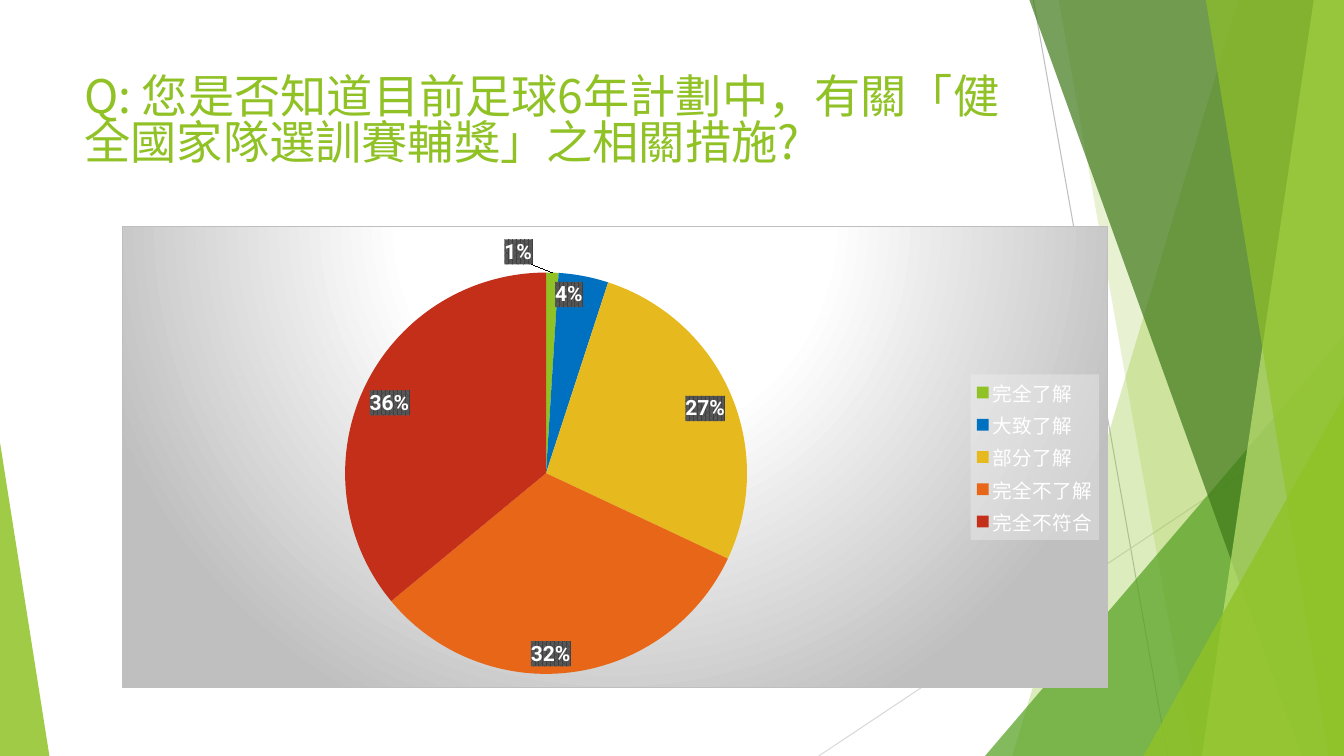
"""Build the survey slide with its pie chart of answers."""
from copy import deepcopy

from lxml.etree import SubElement
from pptx import Presentation
from pptx.chart.data import CategoryChartData
from pptx.dml.color import RGBColor
from pptx.enum.chart import XL_CHART_TYPE, XL_LABEL_POSITION, XL_LEGEND_POSITION
from pptx.enum.shapes import MSO_CONNECTOR, MSO_SHAPE
from pptx.enum.text import MSO_ANCHOR
from pptx.oxml import parse_xml
from pptx.oxml.ns import nsdecls, qn
from pptx.util import Inches, Pt

WIDTH, HEIGHT = 13.33, 7.5
COLORS = {
    "green": "90C226", "leaf": "54A021", "forest": "3F7819", "lime": "C0E474",
    "blue": "0070C0", "yellow": "E6B91E", "orange": "E76618", "red": "C42F1A",
    "white": "FFFFFF", "pale": "F2F2F2", "silver": "D9D9D9", "gray": "BFBFBF",
    "label": "404040", "label_back": "595959",
}
CJK_FONT, LATIN_FONT = "Noto Sans CJK SC", "Roboto"
QUESTION = "Q: 您是否知道目前足球6年計劃中，有關「健全國家隊選訓賽輔獎」之相關措施?"
ANSWERS = [
    ("完全了解", 1, "green"),
    ("大致了解", 4, "blue"),
    ("部分了解", 27, "yellow"),
    ("完全不了解", 32, "orange"),
    ("完全不符合", 36, "red"),
]
RAYS = [((10.25, 0), (11.58, HEIGHT), "gray"), ((WIDTH, 4.03), (8.12, HEIGHT), "silver")]
# kind, geometry, colour, opacity in percent
FACETS = [
    ("panel", (12.28, 10.04), "green", 30),
    ("panel", (10.5, 11.83), "green", 20),
    ("wedge", (9.77, 3.33, 3.56, 1), "leaf", 72),
    ("panel", (10.21, 12.91), "forest", 70),
    ("panel", (13.03, 11.92), "lime", 70),
    ("panel", (11.96, 13.18), "green", 65),
    ("wedge", (11.34, 3.93, 1.99, 1), "green", 80),
    ("wedge", (0, 4.39, 0.49, 0), "green", 85),
]
TITLE_BOX = (0.74, 0.67, 9.4, 1.44)
CHART_BOX = (1.21, 2.24, 9.78, 4.59)
PIE_LAYOUT = {"x": 0.226, "y": 0.1, "w": 0.408, "h": 0.87}


def rgb(name):
    return RGBColor.from_string(COLORS[name])


def color_xml(name, extra=""):
    return f'<a:srgbClr val="{COLORS[name]}">{extra}</a:srgbClr>'


def add_ray(slide, start, end, color):
    ray = slide.shapes.add_connector(MSO_CONNECTOR.STRAIGHT, *map(Inches, start + end))
    ray.line.color.rgb = rgb(color)
    ray.line.width = Pt(0.75)
    SubElement(ray._element.spPr, qn("a:effectLst"))


def add_facet(slide, kind, geometry, color, opacity):
    if kind == "panel":
        top_x, bottom_x = geometry
        corners = [(WIDTH, 0), (WIDTH, HEIGHT), (bottom_x, HEIGHT)]
        outline = slide.shapes.build_freeform(Inches(top_x), 0)
        outline.add_line_segments([(Inches(x), Inches(y)) for x, y in corners])
        facet = outline.convert_to_shape()
    else:
        left, top, width, apex = geometry
        facet = slide.shapes.add_shape(
            MSO_SHAPE.ISOSCELES_TRIANGLE, *map(Inches, (left, top, width, HEIGHT - top)))
        facet.adjustments[0] = apex
    facet.shadow.inherit = False
    facet.line.fill.background()
    facet.fill.solid()
    facet.fill.fore_color.rgb = rgb(color)
    tint = facet._element.spPr.find(qn("a:solidFill"))[0]
    SubElement(tint, qn("a:alpha"), val=str(opacity * 1000))


def add_question(slide):
    box = slide.shapes.add_textbox(*map(Inches, TITLE_BOX))
    frame = box.text_frame
    frame.word_wrap = True
    frame.vertical_anchor = MSO_ANCHOR.TOP
    frame.margin_top = Inches(0.1)
    paragraph = frame.paragraphs[0]
    paragraph.line_spacing = 0.82
    run = paragraph.add_run()
    run.text = QUESTION
    run.font.size = Pt(33)
    run.font.name = CJK_FONT
    run.font.color.rgb = rgb("green")
    SubElement(run.font._element, qn("a:ea"), typeface=CJK_FONT)


def style_font(font, size, color, bold=False):
    font.name = LATIN_FONT
    font.size = Pt(size)
    font.bold = bold
    font.color.rgb = rgb(color)


def fill_behind_text(parent, fill):
    parent.find(qn("c:txPr")).addprevious(
        parse_xml(f'<c:spPr {nsdecls("c", "a")}>{fill}</c:spPr>'))


def layout_xml(parts, target=""):
    places = "".join(f'<c:{key} val="{value}"/>' for key, value in parts.items())
    return parse_xml(f'<c:layout {nsdecls("c")}><c:manualLayout>{target}{places}'
                     '</c:manualLayout></c:layout>')


def style_labels(plot):
    plot.has_data_labels = True
    labels = plot.data_labels
    labels.show_percentage = True
    labels.show_value = False
    labels.number_format = "0%"
    labels.number_format_is_linked = False
    labels.position = XL_LABEL_POSITION.INSIDE_END
    style_font(labels.font, 15, "white", True)
    element = labels._element
    fill_behind_text(element, '<a:pattFill prst="pct75">'
                     f'<a:fgClr>{color_xml("label")}</a:fgClr>'
                     f'<a:bgClr>{color_xml("label_back")}</a:bgClr></a:pattFill>')
    outside = parse_xml(f'<c:dLbl {nsdecls("c")}><c:idx val="0"/></c:dLbl>')
    outside.append(layout_xml({"x": -0.035, "y": -0.005}))
    for child in element:
        if child.tag != qn("c:showLeaderLines"):
            outside.append(deepcopy(child))
    outside.find(qn("c:dLblPos")).set("val", "outEnd")
    element.insert(0, outside)


def add_pie(slide):
    data = CategoryChartData()
    data.categories = [answer for answer, _, _ in ANSWERS]
    data.add_series("Series 1", [share for _, share, _ in ANSWERS])
    chart = slide.shapes.add_chart(XL_CHART_TYPE.PIE, *map(Inches, CHART_BOX), data).chart
    chart.has_title = False
    chart.font.size = Pt(10)
    chart.font.name = LATIN_FONT
    stops = "".join(f'<a:gs pos="{pos * 1000}">{color_xml(color)}</a:gs>'
                    for pos, color in ((0, "white"), (39, "white"), (100, "gray")))
    fill_behind_text(
        chart._chartSpace,
        f'<a:gradFill><a:gsLst>{stops}</a:gsLst><a:path path="circle">'
        '<a:fillToRect l="50000" t="-80000" r="50000" b="180000"/></a:path></a:gradFill>'
        f'<a:ln w="9525"><a:solidFill>{color_xml("gray")}</a:solidFill></a:ln>')

    chart.has_legend = True
    legend = chart.legend
    legend.position = XL_LEGEND_POSITION.RIGHT
    legend.include_in_layout = False
    style_font(legend.font, 14, "white")
    fill_behind_text(legend._element, "<a:solidFill>"
                     + color_xml("pale", '<a:alpha val="39000"/>') + "</a:solidFill>")

    plot = chart.plots[0]
    plot.vary_by_categories = True
    for index, (_, _, color) in enumerate(ANSWERS):
        slice_format = plot.series[0].points[index].format
        slice_format.fill.solid()
        slice_format.fill.fore_color.rgb = rgb(color)
        slice_format.line.fill.background()
    style_labels(plot)
    area = chart._chartSpace.chart.plotArea
    for automatic in area.findall(qn("c:layout")):
        area.remove(automatic)
    area.insert(0, layout_xml(
        PIE_LAYOUT, '<c:layoutTarget val="inner"/><c:xMode val="edge"/><c:yMode val="edge"/>'))


def main():
    deck = Presentation()
    deck.slide_width, deck.slide_height = Inches(WIDTH), Inches(HEIGHT)
    slide = deck.slides.add_slide(deck.slide_layouts[6])
    for ray in RAYS:
        add_ray(slide, *ray)
    for facet in FACETS:
        add_facet(slide, *facet)
    add_question(slide)
    add_pie(slide)
    deck.save("out.pptx")


if __name__ == "__main__":
    main()
